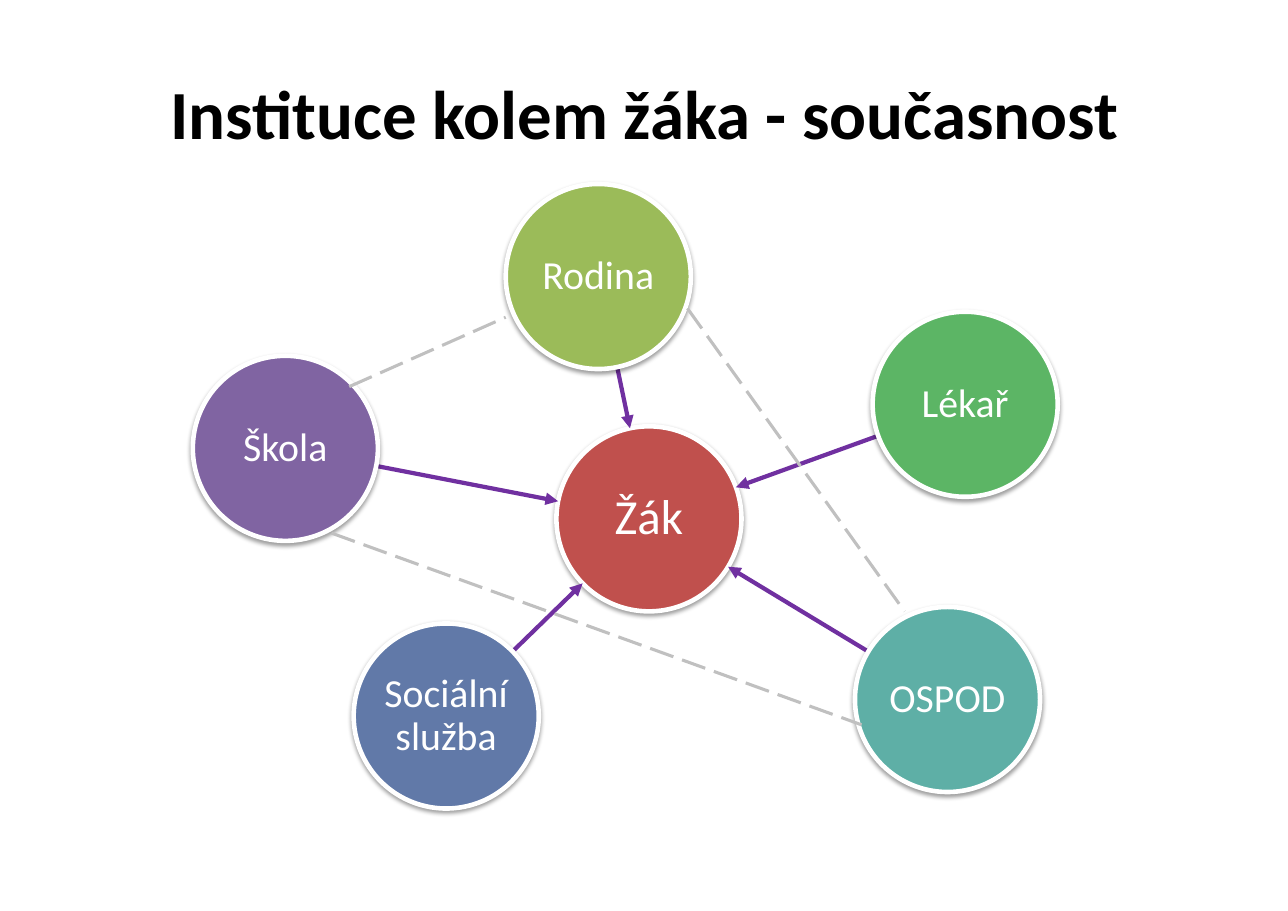
import math

from lxml import etree
from pptx import Presentation
from pptx import util as u
from pptx.dml.color import RGBColor
from pptx.enum import dml, shapes, text
from pptx.oxml import parse_xml
from pptx.oxml.ns import nsdecls, qn

PX = 9144
DIAMETER = 168
RADIUS = DIAMETER // 2
FONT = "Calibri"
COLORS = {
    "title": "000000", "white": "FFFFFF", "arrow": "7030A0", "dash": "C0C0C0",
    "pupil": "C0504D", "family": "9BBB59", "doctor": "5CB565",
    "ospod": "5EAFA6", "social": "6179A8", "school": "8064A2",
}
PUPIL = (589, 471)
INSTITUTIONS = [
    ("Rodina", "family", (543, 251)),
    ("Lékař", "doctor", (876, 367)),
    ("OSPOD", "ospod", (860, 635)),
    ("Sociální služba", "social", (405, 650)),
    ("Škola", "school", (259, 407)),
]
DASHED_LINKS = [
    ((301, 484), (782, 658)),
    ((317, 351), (459, 288)),
    ((624, 280), (821, 555)),
]


def px(*values):
    return [u.Emu(round(v * PX)) for v in values]


def rgb(name):
    return RGBColor.from_string(COLORS[name])


def set_font(p, size, color, bold=False):
    p.alignment = text.PP_ALIGN.CENTER
    p.font.name = FONT
    p.font.size = u.Pt(size)
    p.font.bold = bold
    p.font.color.rgb = rgb(color)


def add_title(s, label):
    sp = s.shapes.title
    sp.left, sp.top, sp.width, sp.height = px(59, 33, 1052, 138)
    tf = sp.text_frame
    tf.text = label
    tf.vertical_anchor = text.MSO_ANCHOR.MIDDLE
    set_font(tf.paragraphs[0], 45, "title", True)


def add_shadow(sp):
    sp.shadow.inherit = False
    effects = sp._element.spPr.find(qn("a:effectLst"))
    effects.append(parse_xml(
        f'<a:outerShdw {nsdecls("a")} blurRad="{u.Pt(3.1)}" dist="{u.Pt(1.6)}" '
        'dir="5400000" rotWithShape="0"><a:srgbClr val="000000">'
        '<a:alpha val="38000"/></a:srgbClr></a:outerShdw>'))


def add_circle(s, label, color, center, size=26):
    x, y = center
    sp = s.shapes.add_shape(shapes.MSO_SHAPE.OVAL,
                            *px(x - RADIUS, y - RADIUS, DIAMETER, DIAMETER))
    add_shadow(sp)
    sp.fill.solid()
    sp.fill.fore_color.rgb = rgb(color)
    sp.line.color.rgb = rgb("white")
    sp.line.width = u.Pt(3)
    tf = sp.text_frame
    tf.word_wrap = True
    tf.vertical_anchor = text.MSO_ANCHOR.MIDDLE
    tf.margin_left = tf.margin_right = tf.margin_top = tf.margin_bottom = px(2)[0]
    p = tf.paragraphs[0]
    p.text = label
    p.line_spacing = 0.9
    set_font(p, size, "white")


def add_line(s, start, end, color, width):
    line = s.shapes.add_connector(shapes.MSO_CONNECTOR.STRAIGHT, *px(*start, *end))
    line.line.color.rgb = rgb(color)
    line.line.width = u.Pt(width)
    etree.SubElement(line._element.spPr, qn("a:effectLst"))
    return line


def add_arrow(s, center):
    dx, dy = PUPIL[0] - center[0], PUPIL[1] - center[1]
    ratio = RADIUS / math.hypot(dx, dy)
    start = (center[0] + dx * ratio, center[1] + dy * ratio)
    end = (PUPIL[0] - dx * ratio, PUPIL[1] - dy * ratio)
    line = add_line(s, start, end, "arrow", 2.75)
    etree.SubElement(line.line._get_or_add_ln(), qn("a:tailEnd"), type="triangle")


def add_dashed_link(s, start, end):
    line = add_line(s, start, end, "dash", 2)
    line.line.dash_style = dml.MSO_LINE.LONG_DASH


def main():
    prs = Presentation()
    prs.slide_width, prs.slide_height = px(1169, 827)
    s = prs.slides.add_slide(prs.slide_layouts[5])
    add_title(s, "Instituce kolem žáka - současnost")
    add_circle(s, "Žák", "pupil", PUPIL, 32)
    for label, color, center in INSTITUTIONS:
        add_arrow(s, center)
        add_circle(s, label, color, center)
    for start, end in DASHED_LINKS:
        add_dashed_link(s, start, end)
    prs.save("out.pptx")


if __name__ == "__main__":
    main()
